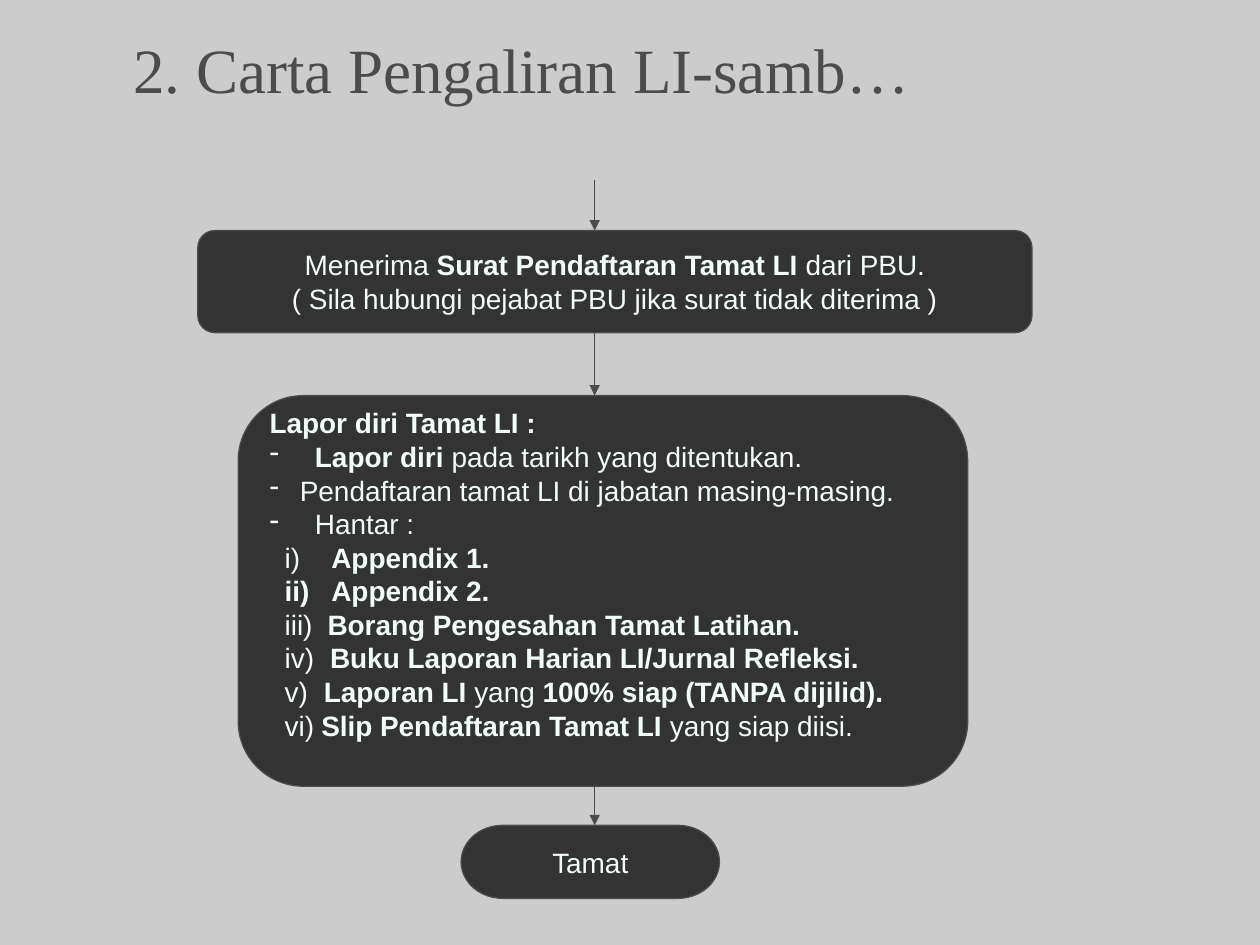
from lxml.etree import SubElement
from pptx import Presentation
from pptx.dml.color import RGBColor
from pptx.enum.shapes import MSO_CONNECTOR, MSO_SHAPE
from pptx.enum.text import MSO_ANCHOR, PP_ALIGN
from pptx.oxml.ns import qn
from pptx.util import Inches, Pt

BACKGROUND, DARK, GREY, PALE = "CCCCCC", "333333", "4C4C4C", "F2FDF7"
TITLE_FORMAT = {"size": Pt(36), "name": "Times New Roman"}
BODY_FORMAT = {"size": Pt(16), "name": "Arial"}
ARROW_X = 4.72
MARKER_INDENT = 0.12

NOTICE = [
    [("Menerima ", False), ("Surat Pendaftaran Tamat LI ", True), ("dari PBU.", False)],
    [("( Sila hubungi pejabat PBU jika surat tidak diterima )", False)],
]
# Each entry: text indent in inches, runs of (text, bold)
DASH_ITEMS = [
    (0.36, [("Lapor diri ", True), ("pada tarikh yang ditentukan.", False)]),
    (0.24, [("Pendaftaran tamat LI di jabatan masing-masing.", False)]),
    (0.36, [("Hantar :", False)]),
]
NUMBERED_ITEMS = [
    (0.49, [("i)\t", False), ("Appendix 1.", True)]),
    (0.49, [("ii)\tAppendix 2.", True)]),
    (0.46, [("iii)\t", False), ("Borang Pengesahan Tamat Latihan.", True)]),
    (0.48, [("iv)\t", False), ("Buku Laporan Harian LI/Jurnal Refleksi.", True)]),
    (0.43, [("v)\t", False), ("Laporan LI", True), (" yang ", False),
            ("100% siap (TANPA dijilid).", True)]),
    (0.41, [("vi)\t", False), ("Slip Pendaftaran Tamat LI", True),
            (" yang siap diisi.", False)]),
]


def color(value):
    return RGBColor.from_string(value)


def set_attributes(target, values):
    for name, value in values.items():
        setattr(target, name, value)


def next_paragraph(frame):
    first = frame.paragraphs[0]
    return frame.add_paragraph() if first.runs else first


def write_paragraph(frame, runs, text_format, text_color, align=PP_ALIGN.LEFT,
                    indent=0, first_line=0, bullet=None):
    paragraph = next_paragraph(frame)
    paragraph.alignment = align
    if indent:
        properties = paragraph._p.get_or_add_pPr()
        properties.set("marL", str(Inches(indent)))
        properties.set("indent", str(Inches(first_line - indent)))
        if bullet:
            SubElement(properties, qn("a:buChar")).set("char", bullet)
    for text, bold in runs:
        run = paragraph.add_run()
        run.text = text
        set_attributes(run.font, {**text_format, "bold": bold})
        run.font.color.rgb = color(text_color)


def add_title(slide, text):
    box = slide.shapes.add_textbox(Inches(0.08), Inches(0.12), Inches(8.12), Inches(0.63))
    set_attributes(box.text_frame, {"word_wrap": True, "margin_top": Inches(0.12)})
    write_paragraph(box.text_frame, [(text, False)], TITLE_FORMAT, GREY, PP_ALIGN.CENTER)


def add_step(slide, kind, left, top, width, height):
    shape = slide.shapes.add_shape(kind, Inches(left), Inches(top),
                                   Inches(width), Inches(height))
    shape.shadow.inherit = False
    shape.fill.solid()
    shape.fill.fore_color.rgb = color(DARK)
    shape.line.color.rgb = color(GREY)
    shape.line.width = Pt(0.75)
    frame = shape.text_frame
    set_attributes(frame, {"word_wrap": True, "vertical_anchor": MSO_ANCHOR.MIDDLE})
    return frame


def add_arrow(slide, top, bottom):
    arrow = slide.shapes.add_connector(MSO_CONNECTOR.STRAIGHT, Inches(ARROW_X), Inches(top),
                                       Inches(ARROW_X), Inches(bottom))
    arrow.line.color.rgb = color(GREY)
    arrow.line.width = Pt(0.75)
    SubElement(arrow.line._get_or_add_ln(), qn("a:tailEnd")).set("type", "triangle")
    SubElement(arrow._element.spPr, qn("a:effectLst"))


def main():
    presentation = Presentation()
    set_attributes(presentation, {"slide_width": Inches(10), "slide_height": Inches(7.5)})
    slide = presentation.slides.add_slide(presentation.slide_layouts[6])
    slide.background.fill.solid()
    slide.background.fill.fore_color.rgb = color(BACKGROUND)
    add_title(slide, "2. Carta Pengaliran LI-samb…")

    # Notice of completion
    process = MSO_SHAPE.FLOWCHART_ALTERNATE_PROCESS
    notice = add_step(slide, process, 1.57, 1.83, 6.62, 0.81)
    for runs in NOTICE:
        write_paragraph(notice, runs, BODY_FORMAT, PALE, PP_ALIGN.CENTER)

    # Reporting checklist
    report = add_step(slide, process, 1.89, 3.14, 5.79, 3.1)
    report.margin_bottom = Inches(0.32)
    write_paragraph(report, [("Lapor diri Tamat LI :", True)], BODY_FORMAT, PALE)
    for indent, runs in DASH_ITEMS:
        write_paragraph(report, runs, BODY_FORMAT, PALE, indent=indent, bullet="-")
    for indent, runs in NUMBERED_ITEMS:
        write_paragraph(report, runs, BODY_FORMAT, PALE, indent=indent,
                        first_line=MARKER_INDENT)

    # End of the flow
    end = add_step(slide, MSO_SHAPE.FLOWCHART_TERMINATOR, 3.66, 6.55, 2.05, 0.58)
    write_paragraph(end, [("Tamat", False)], BODY_FORMAT, PALE, PP_ALIGN.CENTER)

    # Arrows between the steps
    for top, bottom in [(1.43, 1.83), (2.64, 3.14), (6.24, 6.55)]:
        add_arrow(slide, top, bottom)

    presentation.save("out.pptx")


if __name__ == "__main__":
    main()
